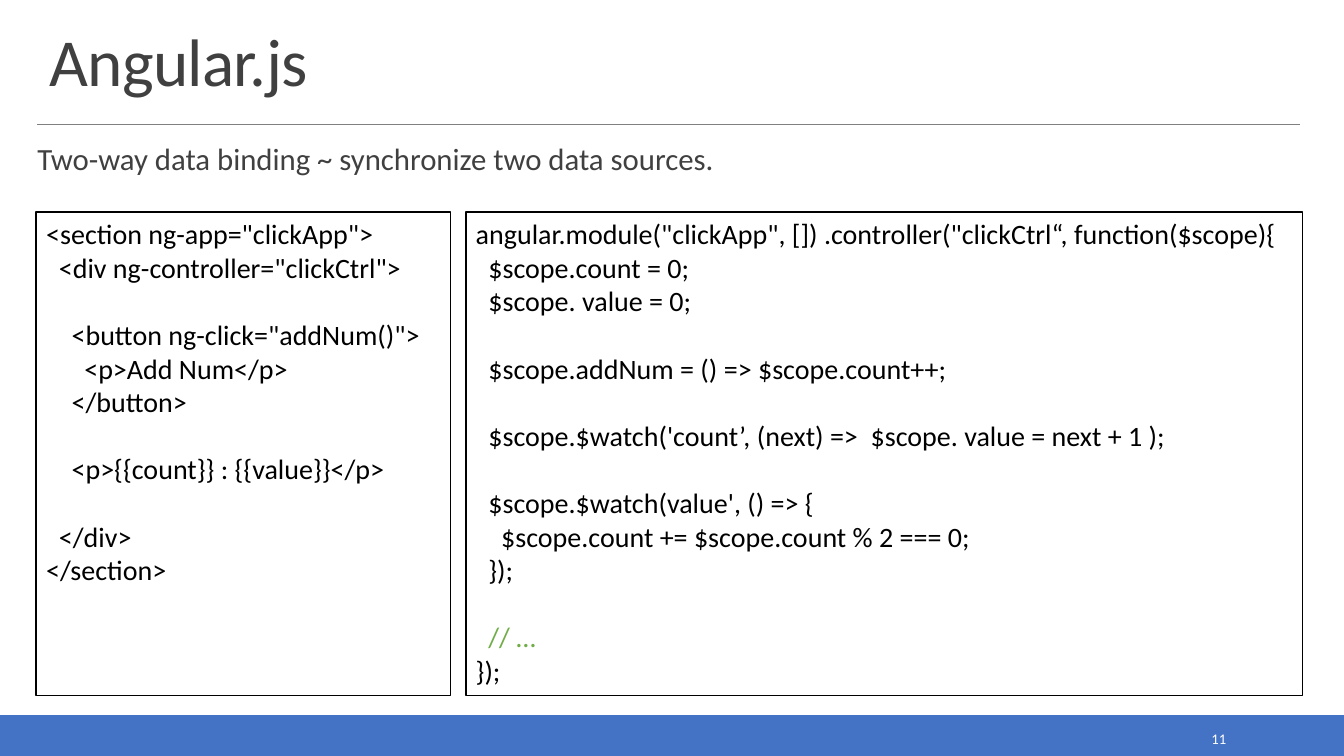
from pptx import Presentation
from pptx.dml.color import RGBColor
from pptx.enum.shapes import MSO_CONNECTOR, MSO_SHAPE
from pptx.enum.text import MSO_ANCHOR, MSO_AUTO_SIZE, PP_ALIGN
from pptx.util import Inches, Pt
from lxml.etree import SubElement
from pptx.oxml.ns import qn

COLORS = {
    "bar": "4472C4",
    "rule": "808080",
    "heading": "404040",
    "code": "000000",
    "comment": "70AD47",
    "white": "FFFFFF",
}
CODE_GAP = 24
CODE_INDENT = 0.126

MARKUP = [
    (0, '<section ng-app="clickApp">'),
    (1, '<div ng-controller="clickCtrl">'),
    None,
    (2, '<button ng-click="addNum()">'),
    (3, "<p>Add Num</p>"),
    (2, "</button>"),
    None,
    (2, "<p>{{count}} : {{value}}</p>"),
    None,
    (1, "</div>"),
    (0, "</section>"),
]
CONTROLLER = [
    (0, 'angular.module("clickApp", []) .controller("clickCtrl“, function($scope){'),
    (1, "$scope.count = 0;"),
    (1, "$scope. value = 0;"),
    None,
    (1, "$scope.addNum = () => $scope.count++;"),
    None,
    (1, "$scope.$watch('count’, (next) =>  $scope. value = next + 1 );"),
    None,
    (1, "$scope.$watch(value', () => {"),
    (2, "$scope.count += $scope.count % 2 === 0;"),
    (1, "});"),
    None,
    (1, "// …"),
    (0, "});"),
]


class SlideBuilder:
    def __init__(self, presentation):
        self.font = "Calibri"
        self.slide = presentation.slides.add_slide(presentation.slide_layouts[5])

    def color(self, name):
        return RGBColor.from_string(COLORS[name])

    def add_run(self, paragraph, text, size, color):
        run = paragraph.add_run()
        run.text = text
        run.font.name = self.font
        run.font.size = Pt(size)
        run.font.color.rgb = self.color(color)
        return run

    def title(self, text, left, top, width, height):
        shape = self.slide.shapes.title
        shape.left, shape.top = Inches(left), Inches(top)
        shape.width, shape.height = Inches(width), Inches(height)
        frame = shape.text_frame
        frame.auto_size = MSO_AUTO_SIZE.NONE
        frame.vertical_anchor = MSO_ANCHOR.BOTTOM
        paragraph = frame.paragraphs[0]
        paragraph.alignment = PP_ALIGN.LEFT
        paragraph.line_spacing = 0.85
        run = self.add_run(paragraph, text, 48, "heading")
        run.font._element.set("spc", "-50")

    def text(self, text, left, top, width, height, size, color):
        shape = self.slide.shapes.add_textbox(
            Inches(left), Inches(top), Inches(width), Inches(height))
        frame = shape.text_frame
        frame.word_wrap = True
        self.add_run(frame.paragraphs[0], text, size, color)
        return frame

    def rectangle(self, left, top, width, height, line, fill=None):
        shape = self.slide.shapes.add_shape(
            MSO_SHAPE.RECTANGLE, Inches(left), Inches(top), Inches(width), Inches(height))
        shape.shadow.inherit = False
        shape.line.color.rgb = self.color(line)
        shape.line.width = Pt(1.25)
        if fill:
            shape.fill.solid()
            shape.fill.fore_color.rgb = self.color(fill)
        else:
            shape.fill.background()
        return shape

    def rule(self, left, right, top):
        connector = self.slide.shapes.add_connector(
            MSO_CONNECTOR.STRAIGHT, Inches(left), Inches(top), Inches(right), Inches(top))
        connector.line.color.rgb = self.color("rule")
        connector.line.width = Pt(0.5)
        SubElement(connector._element.spPr, qn("a:effectLst"))

    def code(self, lines, left, width):
        frame = self.rectangle(left, 2.1, width, 4.8, "code").text_frame
        frame.word_wrap = True
        frame.vertical_anchor = MSO_ANCHOR.TOP
        paragraph = frame.paragraphs[0]
        gap = 0
        for number, line in enumerate(lines):
            if line is None:
                gap = CODE_GAP
                continue
            level, text = line
            if number:
                paragraph = frame.add_paragraph()
            paragraph.alignment = PP_ALIGN.LEFT
            paragraph.space_before = Pt(gap)
            paragraph._p.get_or_add_pPr().set("marL", str(Inches(level * CODE_INDENT)))
            color = "comment" if text.startswith("//") else "code"
            self.add_run(paragraph, text, 20, color)
            gap = 0


def main():
    presentation = Presentation()
    presentation.slide_width = Inches(13.33)
    presentation.slide_height = Inches(7.5)

    builder = SlideBuilder(presentation)
    builder.rectangle(0, 7.1, 13.33, 0.4, "bar", "bar")
    builder.rule(0.37, 12.89, 1.23)
    builder.title("Angular.js", 0.39, 0.2, 12.52, 0.84)

    subtitle = builder.text("Two-way data binding ~ synchronize two data sources.",
                            0.37, 1.39, 12.52, 0.55, 22, "heading")
    subtitle.margin_left = subtitle.margin_right = 0
    subtitle.margin_top = subtitle.margin_bottom = Inches(0.04)
    subtitle.paragraphs[0].line_spacing = 0.9

    page_number = builder.text("11", 10.83, 7.19, 1.43, 0.28, 10.5, "white")
    page_number.vertical_anchor = MSO_ANCHOR.MIDDLE
    page_number.paragraphs[0].alignment = PP_ALIGN.RIGHT

    builder.code(MARKUP, 0.36, 4.11)
    builder.code(CONTROLLER, 4.62, 8.3)
    presentation.save("out.pptx")


if __name__ == "__main__":
    main()
